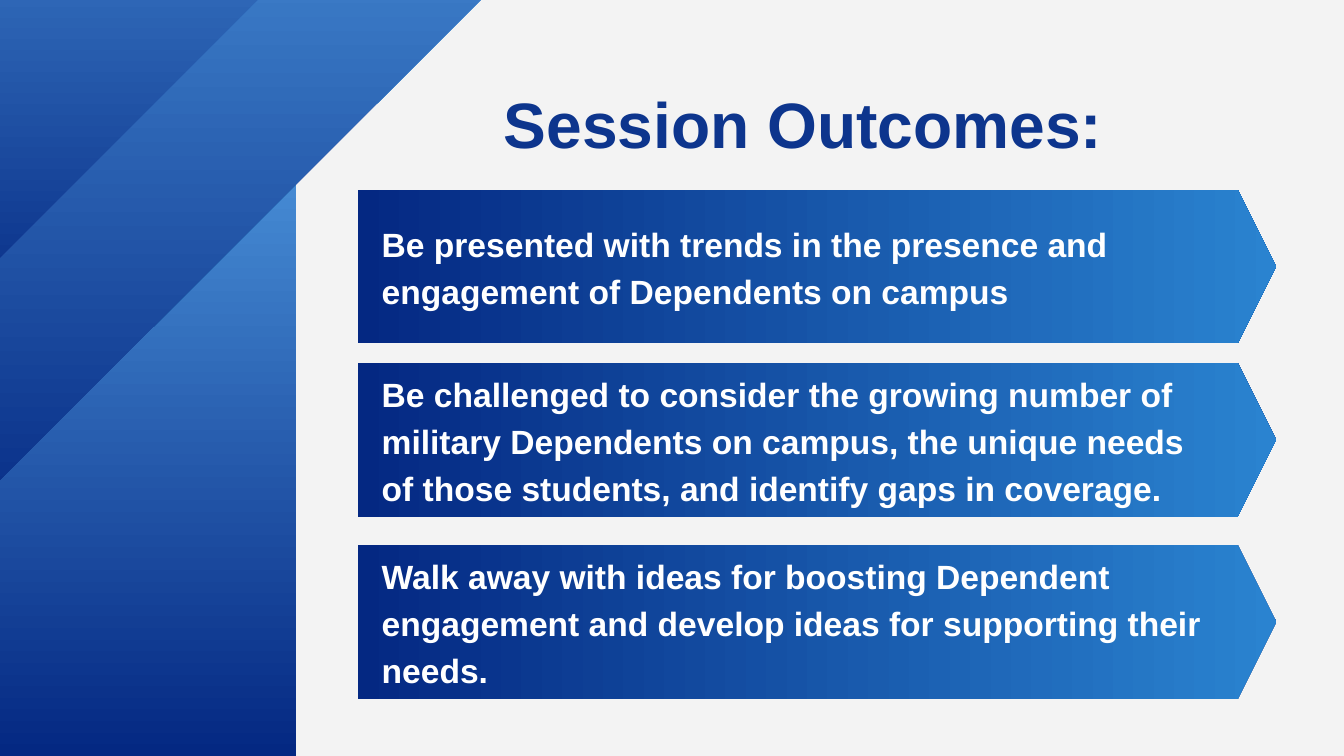
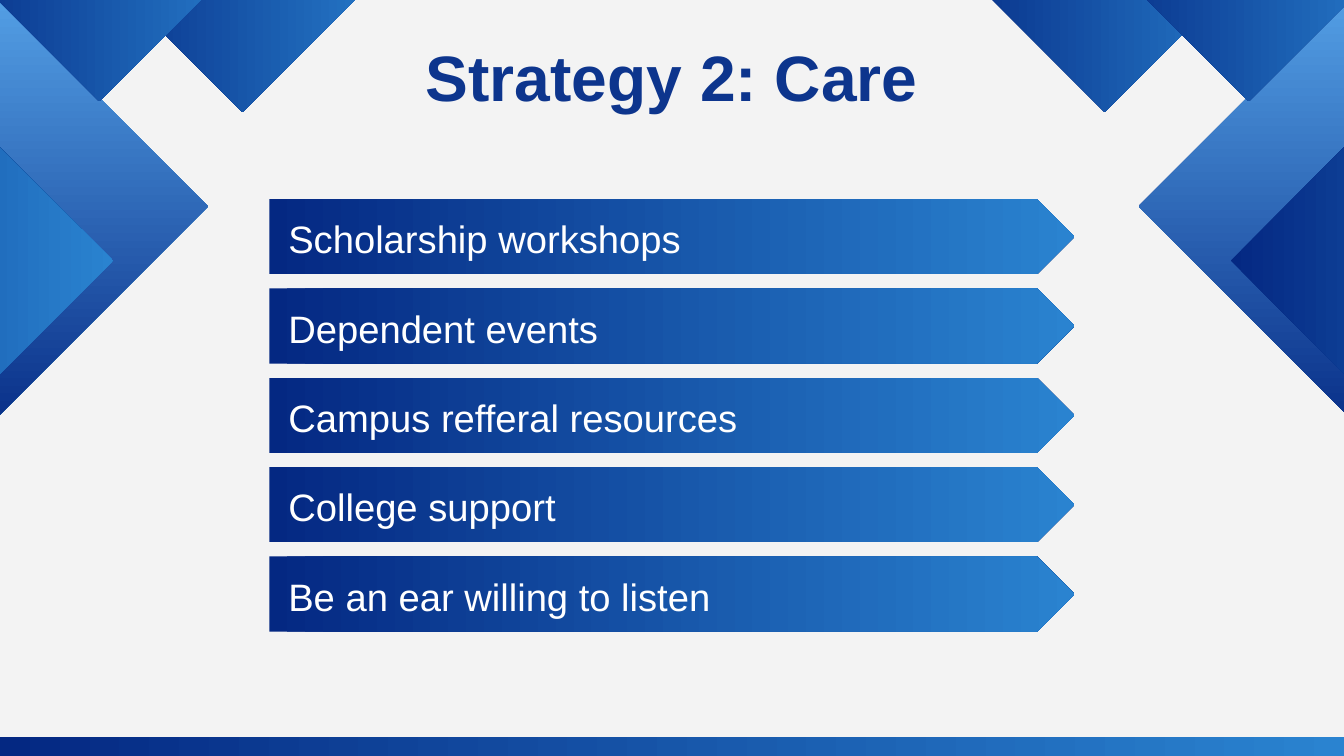
from pptx import Presentation
from pptx.dml.color import RGBColor
from pptx.enum.shapes import MSO_SHAPE
from pptx.enum.text import MSO_ANCHOR, MSO_AUTO_SIZE, PP_ALIGN
from pptx.util import Inches, Pt

WIDTH, HEIGHT = 20, 11.25
FONT = "Arial"
PAPER, NAVY, WHITE = "F3F3F3", "0D358D", "FFFFFF"
ACROSS = ("042882", "2A83D0", 0)
DOWN = ("5AA9ED", "042882", 270)

OUTCOMES = {
    "title": "Session Outcomes:",
    "title_box": (5.82, 1.25, 12.27, 1.15),
    "arrow": {"left": 5.33, "width": 13.66, "height": 2.29, "point": 0.25},
    "text": {"indent": 0.35, "size": 36, "spacing": 50.4, "bold": True, "align": PP_ALIGN.LEFT},
    "items": [
        (2.82, 12.14, 1.38, "Be presented with trends in the presence and engagement of Dependents on campus"),
        (5.4, 12.14, 2.08, "Be challenged to consider the growing number of military Dependents on campus, "
                           "the unique needs of those students, and identify gaps in coverage."),
        (8.11, 12.54, 2.08, "Walk away with ideas for boosting Dependent engagement and develop ideas "
                            "for supporting their needs."),
    ],
}
SIDE_PANEL = (-0.26, 0, 4.66, HEIGHT)
DIAGONAL_BANDS = [
    [(3.66, -5.13), (7.97, -0.82), (-1.19, 8.33), (-5.5, 4.03)],
    [(0.16, -5.37), (4.68, -0.85), (-1.26, 5.09), (-5.78, 0.57)],
]

STRATEGIES = ["Scholarship workshops", "Dependent events", "Campus refferal resources",
              "College support", "Be an ear willing to listen"]
FIRST_ROW, ROW_PITCH = 2.96, 1.33
CARE = {
    "title": "Strategy 2: Care",
    "title_box": (4.59, 0.55, 10.82, 1.15),
    "arrow": {"left": 4.01, "width": 11.98, "height": 1.12, "point": 0.5},
    "text": {"indent": 0.28, "size": 40.9, "spacing": 57.2, "bold": False, "align": PP_ALIGN.JUSTIFY},
    "items": [(FIRST_ROW + i * ROW_PITCH, 8.55, 0.77, name) for i, name in enumerate(STRATEGIES)],
}
DIAMONDS = [
    ((-0.6, 20.64), 3.07, 7.39, DOWN),
    ((-1.87, 21.87), 3.88, 7.11, ACROSS),
    ((3.61, 16.44), -1.08, 5.5, ACROSS),
    ((1.48, 18.58), -1.24, 5.5, ACROSS),
]
FOOTER_BAND = (0, 10.97, WIDTH, 0.28)
TEXT_LIFT = 0.04


def rgb(value):
    return RGBColor.from_string(value)


def paint(sp, gradient):
    start, end, angle = gradient
    sp.shadow.inherit = False
    sp.line.fill.background()
    sp.fill.gradient()
    sp.fill.gradient_angle = angle
    for stop, color in zip(sp.fill.gradient_stops, (start, end)):
        stop.color.rgb = rgb(color)
    return sp


def add_preset(s, kind, box, gradient):
    return paint(s.shapes.add_shape(kind, *map(Inches, box)), gradient)


def add_polygon(s, points, gradient):
    first, *rest = [(Inches(x), Inches(y)) for x, y in points]
    builder = s.shapes.build_freeform(*first)
    builder.add_line_segments(rest, close=True)
    paint(builder.convert_to_shape(), gradient)


def write(sp, text, size, spacing, color, bold, align):
    tf = sp.text_frame
    tf.word_wrap = True
    tf.auto_size = MSO_AUTO_SIZE.NONE
    tf.vertical_anchor = MSO_ANCHOR.TOP
    tf.margin_left = tf.margin_top = tf.margin_right = tf.margin_bottom = 0
    p = tf.paragraphs[0]
    p.text = text
    p.alignment = align
    p.line_spacing = Pt(spacing)
    p.font.name, p.font.size, p.font.bold = FONT, Pt(size), bold
    p.font.color.rgb = rgb(color)


def add_slide(prs, content):
    s = prs.slides.add_slide(prs.slide_layouts[5])
    title = s.shapes.title
    title.left, title.top, title.width, title.height = map(Inches, content["title_box"])
    write(title, content["title"], 68.7, 82.4, NAVY, True, PP_ALIGN.CENTER)
    return s


def add_arrows(s, content):
    arrow, style = content["arrow"], content["text"]
    for top, width, height, text in content["items"]:
        box = (arrow["left"], top, arrow["width"], arrow["height"])
        add_preset(s, MSO_SHAPE.PENTAGON, box, ACROSS).adjustments[0] = arrow["point"]
        text_top = top + (arrow["height"] - height) / 2 - TEXT_LIFT
        label = s.shapes.add_textbox(
            *map(Inches, (arrow["left"] + style["indent"], text_top, width, height)))
        write(label, text, style["size"], style["spacing"], WHITE, style["bold"], style["align"])


def build_outcomes(prs):
    s = add_slide(prs, OUTCOMES)
    add_preset(s, MSO_SHAPE.RECTANGLE, SIDE_PANEL, DOWN)
    for points in DIAGONAL_BANDS:
        add_polygon(s, points, DOWN)
    add_arrows(s, OUTCOMES)


def build_care(prs):
    s = add_slide(prs, CARE)
    for centers, y, size, gradient in DIAMONDS:
        for x in centers:
            add_preset(s, MSO_SHAPE.DIAMOND, (x - size / 2, y - size / 2, size, size), gradient)
    add_preset(s, MSO_SHAPE.RECTANGLE, FOOTER_BAND, ACROSS)
    add_arrows(s, CARE)


def main():
    prs = Presentation()
    prs.slide_width, prs.slide_height = Inches(WIDTH), Inches(HEIGHT)
    background = prs.slide_master.background.fill
    background.solid()
    background.fore_color.rgb = rgb(PAPER)
    build_outcomes(prs)
    build_care(prs)
    prs.save("out.pptx")


if __name__ == "__main__":
    main()
